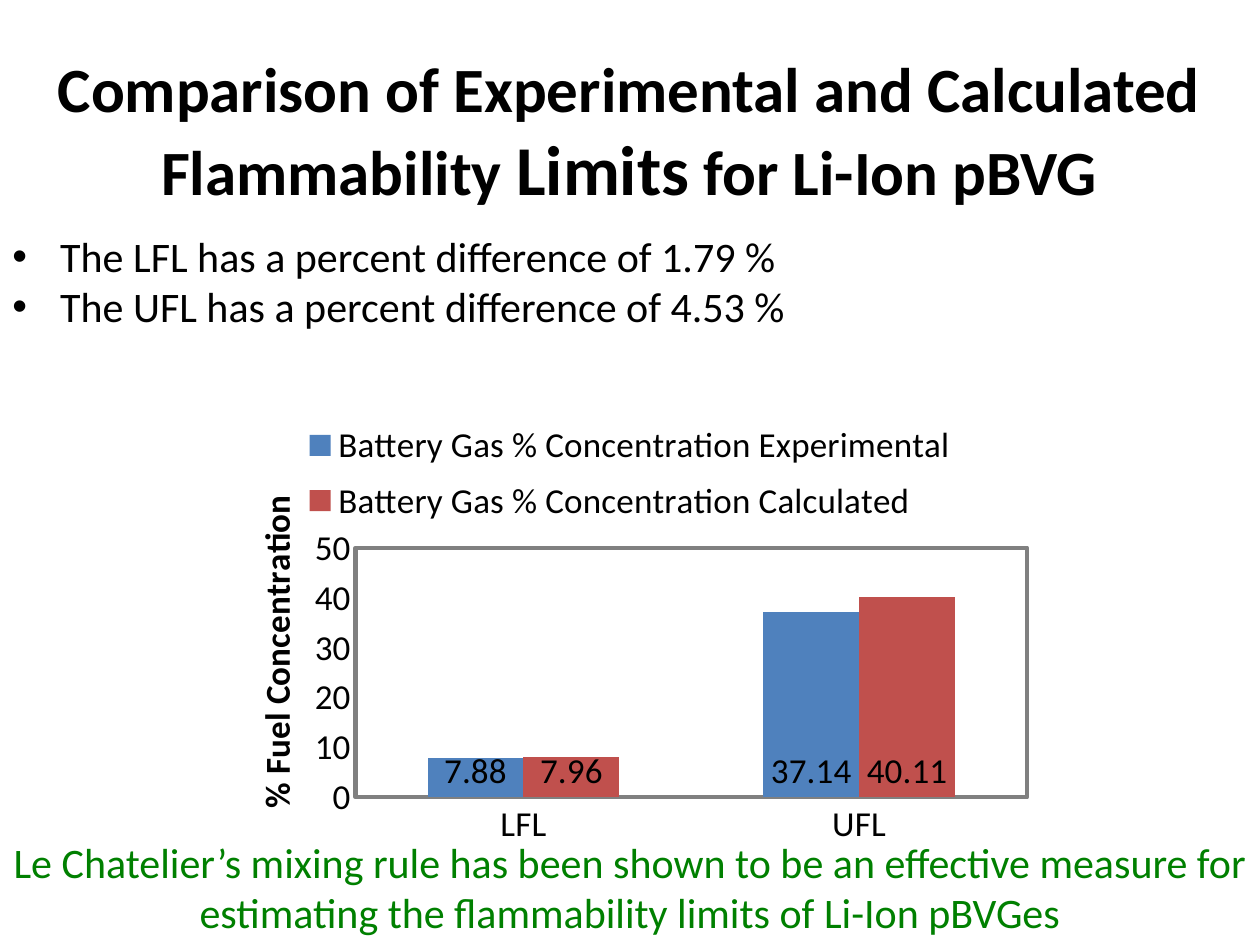
from dataclasses import dataclass

from lxml.etree import SubElement
from pptx import Presentation
from pptx.chart.data import CategoryChartData
from pptx.dml.color import RGBColor
from pptx.enum.chart import XL_CHART_TYPE, XL_LABEL_POSITION, XL_LEGEND_POSITION, XL_TICK_MARK
from pptx.enum.text import MSO_ANCHOR, PP_ALIGN
from pptx.oxml import parse_xml
from pptx.oxml.ns import nsdecls, qn
from pptx.util import Inches, Pt


@dataclass(frozen=True)
class Theme:
    """Colours, font and type sizes of the slide."""
    font: str = "Calibri"
    ink: RGBColor = RGBColor(0x00, 0x00, 0x00)
    conclusion: RGBColor = RGBColor(0x00, 0x80, 0x00)
    experimental: RGBColor = RGBColor(0x4F, 0x81, 0xBD)
    calculated: RGBColor = RGBColor(0xC0, 0x50, 0x4D)
    frame: RGBColor = RGBColor(0x80, 0x80, 0x80)
    title: Pt = Pt(36)
    emphasis: Pt = Pt(40)
    body: Pt = Pt(24)
    chart: Pt = Pt(20)


THEME = Theme()


def style(font, size, color=THEME.ink, bold=False):
    """Apply the theme font with a size, colour and weight."""
    font.name, font.size, font.bold = THEME.font, size, bold
    font.color.rgb = color


def add_frame(slide, box, anchor=MSO_ANCHOR.TOP):
    """Add a wrapping text box and return its text frame."""
    frame = slide.shapes.add_textbox(*map(Inches, box)).text_frame
    frame.word_wrap = True
    frame.vertical_anchor = anchor
    return frame


def add_title(slide, box):
    """Place the centred title with one larger word."""
    heading = add_frame(slide, box, MSO_ANCHOR.MIDDLE).paragraphs[0]
    heading.alignment = PP_ALIGN.CENTER
    for words, size in (
        ("Comparison of Experimental and Calculated Flammability ", THEME.title),
        ("Limits", THEME.emphasis),
        (" for Li-Ion pBVG", THEME.title),
    ):
        run = heading.add_run()
        run.text = words
        style(run.font, size, bold=True)


def add_findings(slide, box, findings):
    """Place the findings as a bulleted list."""
    frame = add_frame(slide, box)
    for index, finding in enumerate(findings):
        item = frame.paragraphs[0] if index == 0 else frame.add_paragraph()
        item.text = finding
        style(item.font, THEME.body)
        properties = item._p.get_or_add_pPr()
        indent = Inches(0.38)
        properties.set("marL", str(indent))
        properties.set("indent", str(-indent))
        SubElement(properties, qn("a:buFont")).set("typeface", "Arial")
        SubElement(properties, qn("a:buChar")).set("char", "•")


def add_conclusion(slide, box, sentence):
    """Place the centred closing sentence."""
    closing = add_frame(slide, box).paragraphs[0]
    closing.text = sentence
    closing.alignment = PP_ALIGN.CENTER
    style(closing.font, THEME.body, THEME.conclusion)


def set_layout(part, index, target="", **fractions):
    """Position a chart part by fractions of the chart area."""
    for old in part.findall(qn("c:layout")):
        part.remove(old)
    inner = f'<c:layoutTarget val="{target}"/>' if target else ""
    modes = "".join(f'<c:{key}Mode val="edge"/>' for key in "xy")
    values = "".join(f'<c:{key} val="{value}"/>' for key, value in fractions.items())
    part.insert(index, parse_xml(
        f'<c:layout {nsdecls("c")}><c:manualLayout>{inner}{modes}{values}'
        "</c:manualLayout></c:layout>"))


def frame_plot(plot_area):
    """Outline the plot area."""
    plot_area.append(parse_xml(
        f'<c:spPr {nsdecls("c", "a")}><a:noFill/><a:ln w="{Pt(2.5)}"><a:solidFill>'
        f'<a:srgbClr val="{THEME.frame}"/></a:solidFill></a:ln></c:spPr>'))


def add_limits_chart(slide, box):
    """Place the clustered columns of experimental and calculated limits."""
    limits = CategoryChartData()
    limits.categories = ["LFL", "UFL"]
    limits.add_series("Battery Gas % Concentration Experimental", (7.88, 37.14))
    limits.add_series("Battery Gas % Concentration Calculated", (7.96, 40.11))
    chart = slide.shapes.add_chart(
        XL_CHART_TYPE.COLUMN_CLUSTERED, *map(Inches, box), limits).chart
    style(chart.font, THEME.chart)
    chart.has_title = False
    chart.has_legend = True
    chart.legend.position = XL_LEGEND_POSITION.TOP
    chart.legend.include_in_layout = False

    columns = chart.plots[0]
    columns.gap_width, columns.overlap = 150, 0
    columns.vary_by_categories = False
    for series, color in zip(columns.series, (THEME.experimental, THEME.calculated)):
        series.format.fill.solid()
        series.format.fill.fore_color.rgb = color
        series.data_labels.show_value = True
        series.data_labels.position = XL_LABEL_POSITION.INSIDE_BASE
        style(series.data_labels.font, THEME.chart)

    concentration = chart.value_axis
    for axis in (chart.category_axis, concentration):
        axis.has_major_gridlines = False
        axis.major_tick_mark = axis.minor_tick_mark = XL_TICK_MARK.NONE
        axis.format.line.color.rgb = THEME.frame
        style(axis.tick_labels.font, THEME.chart)
    concentration.minimum_scale, concentration.maximum_scale = 0, 50
    concentration.major_unit = 10
    caption = concentration.axis_title.text_frame.paragraphs[0]
    caption.text = "% Fuel Concentration"
    style(caption.font, THEME.chart, bold=True)

    plot_area = chart.element.find(f".//{qn('c:plotArea')}")
    set_layout(plot_area, 0, "inner", x=0.165, y=0.33, w=0.82, h=0.55)
    set_layout(chart.legend._element, 1, x=0.1, y=0.03, w=0.8, h=0.27)
    set_layout(concentration.axis_title._element, 1, x=0.03, y=0.2)
    frame_plot(plot_area)


def main():
    """Build and save the slide."""
    deck = Presentation()
    deck.slide_width, deck.slide_height = Inches(10), Inches(7.5)
    slide = deck.slides.add_slide(deck.slide_layouts[6])
    add_findings(slide, (0, 1.78, 10, 0.91), (
        "The LFL has a percent difference of 1.79 %",
        "The UFL has a percent difference of 4.53 %",
    ))
    add_limits_chart(slide, (1.75, 3.16, 6.5, 3.6))
    add_title(slide, (-0.17, 0.03, 10.33, 2))
    add_conclusion(slide, (0, 6.59, 10, 0.91),
                   "Le Chatelier’s mixing rule has been shown to be an effective measure "
                   "for estimating the flammability limits of Li-Ion pBVGes")
    deck.save("out.pptx")


if __name__ == "__main__":
    main()
